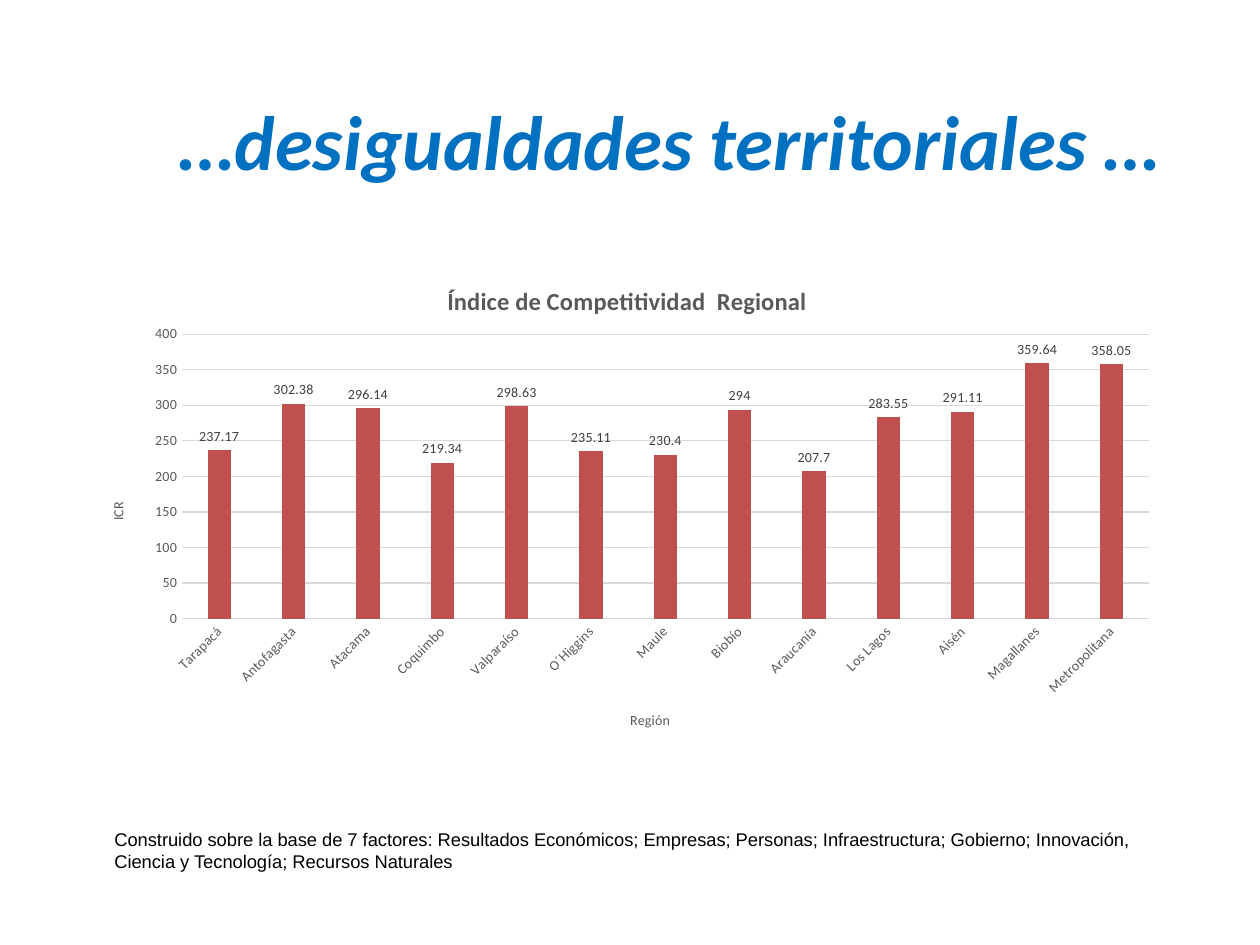
from pptx import Presentation
from pptx import util as u
from pptx.chart.data import CategoryChartData
from pptx.dml.color import RGBColor
from pptx.enum import chart as ch, text
from pptx.oxml import parse_xml
from pptx.oxml.ns import nsdecls, qn

REGIONS = {
    "Tarapacá": 237.17, "Antofagasta": 302.38, "Atacama": 296.14,
    "Coquimbo": 219.34, "Valparaíso": 298.63, "O´Higgins": 235.11,
    "Maule": 230.4, "Biobío": 294, "Araucanía": 207.7, "Los Lagos": 283.55,
    "Aisén": 291.11, "Magallanes": 359.64, "Metropolitana": 358.05,
}
GREY, RULE = "595959", "D9D9D9"


def color(code):
    return RGBColor.from_string(code)


def style_font(font, size, ink, name="Calibri", bold=False, italic=False):
    font.size, font.name = u.Pt(size), name
    font.bold, font.italic = bold, italic
    font.color.rgb = color(ink)


def write(frame, words, align=None, **style):
    paragraph = frame.paragraphs[0]
    paragraph.alignment = align
    run = paragraph.add_run()
    run.text = words
    style_font(run.font, **style)


def place(parent, index, target="", **fractions):
    for old in parent.findall(qn("c:layout")):
        parent.remove(old)
    inner = '<c:layoutTarget val="inner"/>' if target else ""
    modes = "".join(f'<c:{key}Mode val="edge"/>' for key in "xy")
    sizes = "".join(f'<c:{key} val="{val}"/>' for key, val in fractions.items())
    parent.insert(index, parse_xml(
        f'<c:layout {nsdecls("c")}><c:manualLayout>{inner}{modes}{sizes}'
        '</c:manualLayout></c:layout>'))


class Deck:
    def __init__(self, width, height):
        self.prs = Presentation()
        self.prs.slide_width, self.prs.slide_height = u.Inches(width), u.Inches(height)
        self.slide = self.prs.slides.add_slide(self.prs.slide_layouts[6])

    def text(self, box, words, anchor=text.MSO_ANCHOR.TOP, **style):
        frame = self.slide.shapes.add_textbox(*map(u.Inches, box)).text_frame
        frame.word_wrap = True
        frame.vertical_anchor = anchor
        write(frame, words, **style)

    def heading(self, owner, words, x, y, size=8, bold=False):
        title = owner.chart_title if hasattr(owner, "chart_title") else owner.axis_title
        write(title.text_frame, words, size=size, ink=GREY, bold=bold)
        place(title._element, 1, x=x, y=y)

    def axis(self, axis, words, x, y):
        axis.major_tick_mark = axis.minor_tick_mark = ch.XL_TICK_MARK.NONE
        style_font(axis.tick_labels.font, 8, GREY)
        self.heading(axis, words, x, y)

    def line(self, line_format):
        line_format.color.rgb = color(RULE)
        line_format.width = u.Pt(0.75)

    def columns(self, box, title, values, fill):
        data = CategoryChartData()
        data.categories = list(values)
        data.add_series("ICR", list(values.values()))
        chart = self.slide.shapes.add_chart(
            ch.XL_CHART_TYPE.COLUMN_CLUSTERED, *map(u.Inches, box), data).chart
        style_font(chart.font, 8, "000000")
        chart.has_legend = False
        self.heading(chart, title, 0.33, 0.05, size=14, bold=True)

        category, value = chart.category_axis, chart.value_axis
        self.axis(category, "Región", 0.5, 0.91)
        self.axis(value, "ICR", 0.02, 0.49)
        self.line(category.format.line)
        category._element.find(qn("c:txPr")).find(qn("a:bodyPr")).set("rot", "-2700000")
        value_frame = value.axis_title.text_frame
        value_frame._txBody.find(qn("a:bodyPr")).set("rot", "-5400000")
        value.minimum_scale, value.maximum_scale, value.major_unit = 0, 400, 50
        value.format.line.fill.background()
        self.line(value.major_gridlines.format.line)

        plot = chart.plots[0]
        plot.gap_width, plot.overlap, plot.vary_by_categories = 219, -27, False
        bars = plot.series[0].format.fill
        bars.solid()
        bars.fore_color.rgb = color(fill)
        plot.has_data_labels = True
        labels = plot.data_labels
        labels.show_value = True
        labels.position = ch.XL_LABEL_POSITION.OUTSIDE_END
        style_font(labels.font, 8, "404040")
        area = chart._chartSpace.chart.plotArea
        place(area, 0, target="inner", x=0.09, y=0.16, w=0.89, h=0.57)


def main():
    deck = Deck(10, 7.5)
    deck.text((0.69, 0.36, 8.62, 1.5), "…desigualdades territoriales …",
              anchor=text.MSO_ANCHOR.MIDDLE, align=text.PP_ALIGN.RIGHT,
              size=44, ink="0070C0", bold=True, italic=True)
    deck.columns((0.67, 2.02, 8.62, 3.96), "Índice de Competitividad  Regional",
                 REGIONS, "C0504D")
    deck.text((0.81, 6.52, 8.33, 0.45),
              "Construido sobre la base de 7 factores: Resultados Económicos; "
              "Empresas; Personas; Infraestructura; Gobierno; Innovación, "
              "Ciencia y Tecnología; Recursos Naturales",
              size=10.5, ink="000000", name="Arial")
    deck.prs.save("out.pptx")


if __name__ == "__main__":
    main()
